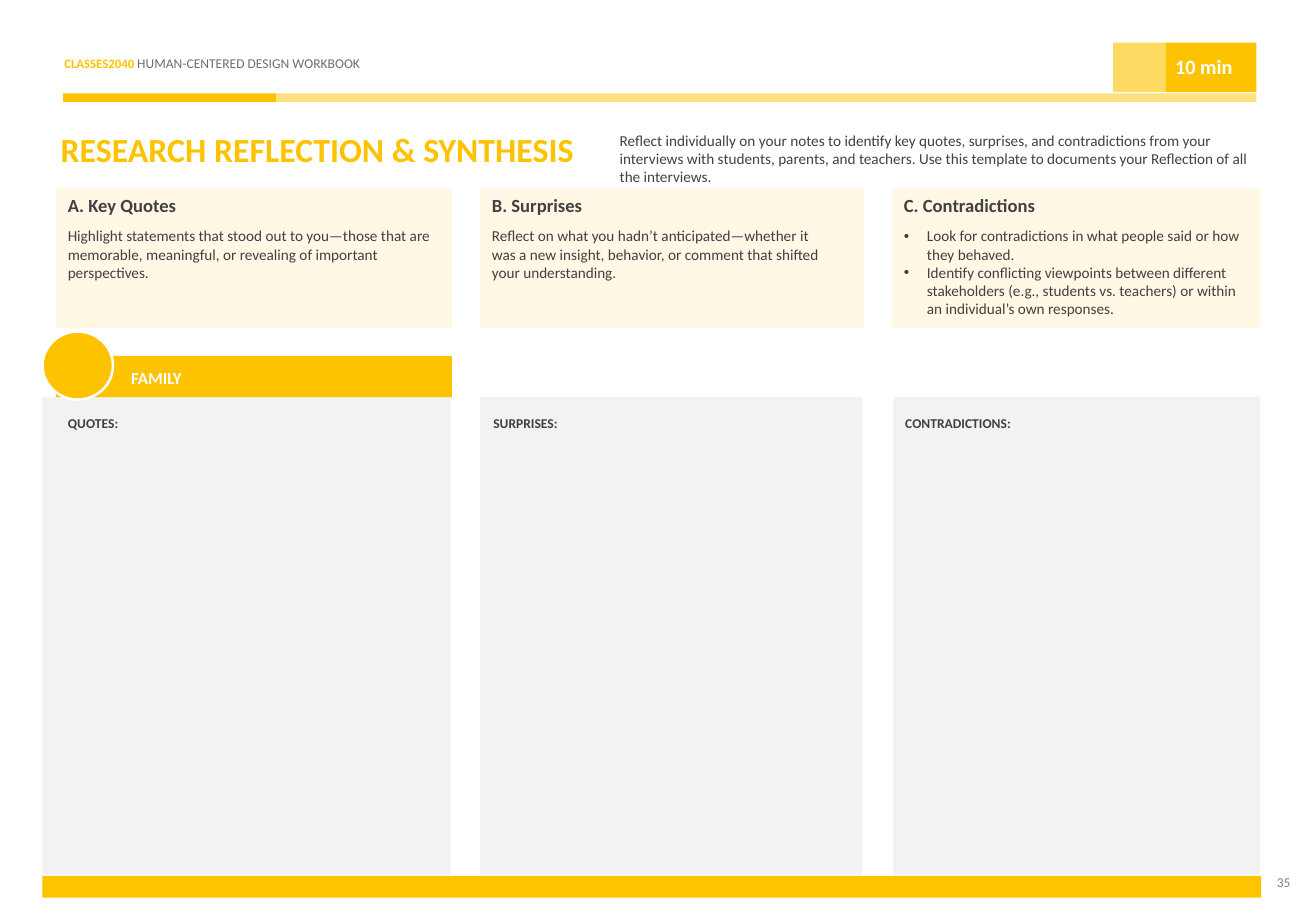
"""Build the research reflection and synthesis worksheet slide."""
from dataclasses import dataclass

from lxml.etree import SubElement
from pptx import Presentation
from pptx.dml.color import RGBColor
from pptx.enum.shapes import MSO_SHAPE
from pptx.enum.text import MSO_ANCHOR, PP_ALIGN
from pptx.oxml.ns import qn
from pptx.shapes.autoshape import Shape
from pptx.slide import Slide
from pptx.text.text import TextFrame, _Paragraph
from pptx.util import Inches, Pt

GOLD = RGBColor(0xFD, 0xC3, 0x00)
FOOTER_GOLD = RGBColor(0xFE, 0xC3, 0x01)
PANEL_GRAY = RGBColor(0xF2, 0xF2, 0xF2)
LABEL_GRAY = RGBColor(0x3F, 0x3F, 0x3F)
BODY_GRAY = RGBColor(0x41, 0x40, 0x42)
HEADER_GRAY = RGBColor(0x6D, 0x6E, 0x71)
PAGE_GRAY = RGBColor(0x80, 0x80, 0x80)
WHITE = RGBColor(0xFF, 0xFF, 0xFF)
FONT = "Calibri"


@dataclass(frozen=True)
class Box:
    left: float
    top: float
    width: float
    height: float

    def lengths(self) -> tuple[int, ...]:
        return tuple(Inches(v) for v in (self.left, self.top, self.width, self.height))


@dataclass(frozen=True)
class Column:
    card_left: float
    card_width: float
    panel_left: float
    panel_width: float
    label_left: float
    heading: str
    guidance: tuple[str, ...]
    label: str


COLUMNS = (
    Column(0.46, 3.26, 0.35, 3.36, 0.56, "A. Key Quotes",
           ("Highlight statements that stood out to you—those that are memorable, "
            "meaningful, or revealing of important perspectives.",), "QUOTES:"),
    Column(3.95, 3.16, 3.95, 3.15, 4.06, "B. Surprises",
           ("Reflect on what you hadn’t anticipated—whether it \nwas a new insight, "
            "behavior, or comment that shifted \nyour understanding.",), "SURPRISES:"),
    Column(7.34, 3.03, 7.35, 3.02, 7.45, "C. Contradictions",
           ("Look for contradictions in what people said or how they behaved.",
            "Identify conflicting viewpoints between different stakeholders (e.g., "
            "students vs. teachers) or within an individual’s own responses."),
           "CONTRADICTIONS:"),
)


def add_block(slide: Slide, box: Box, color: RGBColor, *, kind: MSO_SHAPE = MSO_SHAPE.RECTANGLE,
              opacity: int = 100) -> Shape:
    shape = slide.shapes.add_shape(kind, *box.lengths())
    shape.shadow.inherit = False
    shape.fill.solid()
    shape.fill.fore_color.rgb = color
    shape.line.fill.background()
    if opacity < 100:
        color_element = shape._element.spPr.find(qn("a:solidFill"))[0]
        SubElement(color_element, qn("a:alpha"), val=str(opacity * 1000))
    return shape


def prepare_frame(shape: Shape, *, left: float = 0, top: float = 0, right: float = 0,
                  bottom: float = 0, anchor: MSO_ANCHOR = MSO_ANCHOR.TOP) -> TextFrame:
    frame = shape.text_frame
    frame.word_wrap = True
    frame.vertical_anchor = anchor
    frame.margin_left, frame.margin_top = Inches(left), Inches(top)
    frame.margin_right, frame.margin_bottom = Inches(right), Inches(bottom)
    return frame


def format_paragraph(paragraph: _Paragraph, *, indent: float = 0, bullet: str = "") -> None:
    properties = paragraph._p.get_or_add_pPr()
    properties.set("marL", str(Inches(indent)))
    if bullet:
        properties.set("indent", str(-Inches(indent)))
        SubElement(properties, qn("a:buFont"), typeface="Arial")
        SubElement(properties, qn("a:buChar"), char=bullet)


def write_text(paragraph: _Paragraph, text: str, *, size: float, color: RGBColor,
               bold: bool = False, align: PP_ALIGN = PP_ALIGN.LEFT) -> None:
    paragraph.alignment = align
    for index, line in enumerate(text.split("\n")):
        if index:
            paragraph.add_line_break()
        run = paragraph.add_run()
        run.text = line
        run.font.name = FONT
        run.font.size = Pt(size)
        run.font.bold = bold
        run.font.color.rgb = color


def add_text_box(slide: Slide, box: Box, *, top: float = 0) -> _Paragraph:
    shape = slide.shapes.add_textbox(*box.lengths())
    return prepare_frame(shape, top=top).paragraphs[0]


def draw_header(slide: Slide) -> None:
    add_block(slide, Box(0.52, 0.77, 1.75, 0.07), GOLD)
    add_block(slide, Box(2.27, 0.77, 8.07, 0.07), GOLD, opacity=50)
    header = add_text_box(slide, Box(0.51, 0.42, 3.03, 0.15), top=0.03)
    format_paragraph(header, indent=0.02)
    write_text(header, "CLASSES2040 ", size=7.6, color=GOLD, bold=True)
    write_text(header, "HUMAN-CENTERED DESIGN WORKBOOK", size=8, color=HEADER_GRAY)
    timer = add_block(slide, Box(9.59, 0.35, 0.75, 0.41), GOLD)
    duration = prepare_frame(timer, top=0.1).paragraphs[0]
    format_paragraph(duration, indent=0.08)
    write_text(duration, "10 min", size=12, color=WHITE, bold=True)
    add_block(slide, Box(9.16, 0.35, 0.43, 0.41), GOLD, opacity=61)


def draw_introduction(slide: Slide) -> None:
    title = add_text_box(slide, Box(0.5, 1.06, 4.36, 0.34))
    write_text(title, "RESEARCH REFLECTION & SYNTHESIS", size=20, color=GOLD, bold=True)
    introduction = add_text_box(slide, Box(5.1, 0.98, 5.34, 0.4), top=0.1)
    write_text(introduction, "Reflect individually on your notes to identify key quotes, "
               "surprises, and contradictions from your interviews with students, parents, "
               "and teachers. Use this template to documents your Reflection of all the "
               "interviews.", size=9, color=BODY_GRAY)


def draw_column(slide: Slide, column: Column) -> None:
    add_block(slide, Box(column.panel_left, 3.27, column.panel_width, 3.93), PANEL_GRAY)
    label = add_text_box(slide, Box(column.label_left, 3.32, 1.8, 0.23), top=0.1)
    write_text(label, column.label, size=8, color=LABEL_GRAY, bold=True)
    card = add_block(slide, Box(column.card_left, 1.55, column.card_width, 1.15), GOLD, opacity=10)
    frame = prepare_frame(card, left=0.1, top=0.05, right=0.1, bottom=0.05)
    heading = frame.paragraphs[0]
    heading.space_after = Pt(6)
    write_text(heading, column.heading, size=11, color=BODY_GRAY, bold=True)
    for text in column.guidance:
        paragraph = frame.add_paragraph()
        if len(column.guidance) > 1:
            format_paragraph(paragraph, indent=0.19, bullet="•")
        write_text(paragraph, text, size=9, color=BODY_GRAY)


def draw_family_band(slide: Slide) -> None:
    band = add_block(slide, Box(0.46, 2.93, 3.26, 0.34), GOLD)
    family = prepare_frame(band, left=0.12, top=0.1).paragraphs[0]
    format_paragraph(family, indent=0.5)
    write_text(family, "FAMILY", size=10, color=WHITE, bold=True)
    circle = add_block(slide, Box(0.35, 2.73, 0.58, 0.56), GOLD, kind=MSO_SHAPE.OVAL)
    circle.line.color.rgb = WHITE
    circle.line.width = Pt(1.5)


def draw_footer(slide: Slide) -> None:
    add_block(slide, Box(0.35, 7.21, 10.03, 0.18), FOOTER_GOLD)
    number_box = slide.shapes.add_textbox(*Box(10.31, 7.14, 0.41, 0.25).lengths())
    frame = prepare_frame(number_box, left=0.1, top=0.05, right=0.1, bottom=0.05,
                          anchor=MSO_ANCHOR.MIDDLE)
    write_text(frame.paragraphs[0], "35", size=8, color=PAGE_GRAY, align=PP_ALIGN.RIGHT)


def main() -> None:
    presentation = Presentation()
    presentation.slide_width, presentation.slide_height = Inches(10.83), Inches(7.5)
    slide = presentation.slides.add_slide(presentation.slide_layouts[6])
    draw_header(slide)
    draw_introduction(slide)
    for column in COLUMNS:
        draw_column(slide, column)
    draw_family_band(slide)
    draw_footer(slide)
    presentation.save("out.pptx")


if __name__ == "__main__":
    main()
